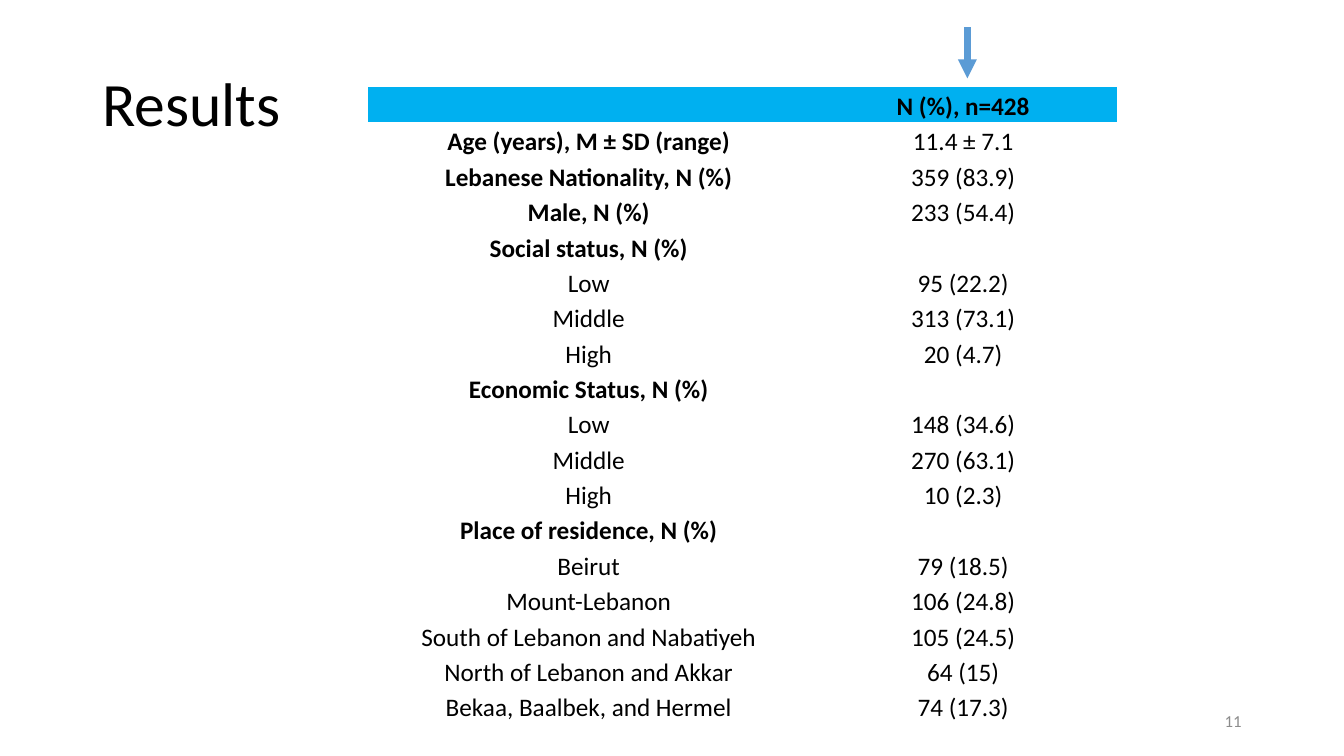
from lxml.etree import SubElement
from pptx import Presentation
from pptx.dml.color import RGBColor
from pptx.enum.shapes import MSO_CONNECTOR
from pptx.enum.text import MSO_ANCHOR, PP_ALIGN
from pptx.oxml.ns import qn
from pptx.util import Pt

COLORS = {"text": "000000", "header": "00B0F0", "arrow": "5B9BD5", "number": "8C8C8C"}
FONT = "Calibri"
LINE_HEIGHT = 25.25
NO_GRID_STYLE = "{2D5ABB26-0587-4C30-8999-92F81FD0307C}"

ROWS = [
    ([], ["N (%), n=428"]),
    (["Age (years), M ± SD (range)"], ["11.4 ± 7.1"]),
    (["Lebanese Nationality, N (%)"], ["359 (83.9)"]),
    (["Male, N (%)"], ["233 (54.4)"]),
    (["Social status, N (%)", "Low", "Middle", "High"],
     ["95 (22.2)", "313 (73.1)", "20 (4.7)"]),
    (["Economic Status, N (%)", "Low", "Middle", "High"],
     ["148 (34.6)", "270 (63.1)", "10 (2.3)"]),
    (["Place of residence, N (%)", "Beirut", "Mount-Lebanon",
      "South of Lebanon and Nabatiyeh", "North of Lebanon and Akkar",
      "Bekaa, Baalbek, and Hermel"],
     ["79 (18.5)", "106 (24.8)", "105 (24.5)", "64 (15)", "74 (17.3)"]),
]


def color(name):
    return RGBColor.from_string(COLORS[name])


def format_paragraph(paragraph, size, color_name, alignment, bold=False):
    paragraph.alignment = alignment
    paragraph.font.name = FONT
    paragraph.font.size = Pt(size)
    paragraph.font.bold = bold
    paragraph.font.color.rgb = color(color_name)


def add_title(slide, text):
    title = slide.shapes.title
    title.left, title.top, title.width, title.height = Pt(66), Pt(24), Pt(828), Pt(104)
    title.text_frame.text = text
    title.text_frame.vertical_anchor = MSO_ANCHOR.MIDDLE
    paragraph = title.text_frame.paragraphs[0]
    format_paragraph(paragraph, 44, "text", PP_ALIGN.LEFT)
    paragraph.line_spacing = 0.9


def fill_cell(cell, lines, first_bold, is_header):
    cell.margin_left = cell.margin_right = Pt(5)
    cell.margin_top = cell.margin_bottom = 0
    cell.vertical_anchor = MSO_ANCHOR.BOTTOM
    if is_header:
        cell.fill.solid()
        cell.fill.fore_color.rgb = color("header")
    else:
        cell.fill.background()
    cell.text_frame.text = "\n".join(lines)
    for index, paragraph in enumerate(cell.text_frame.paragraphs):
        format_paragraph(paragraph, 18, "text", PP_ALIGN.CENTER, first_bold and index == 0)
        paragraph.line_spacing = 1.15


def add_results_table(slide):
    line_counts = [max(len(labels), len(values)) for labels, values in ROWS]
    frame = slide.shapes.add_table(len(ROWS), 2, Pt(263), Pt(62), Pt(535),
                                   Pt(LINE_HEIGHT * sum(line_counts)))
    table = frame.table
    table.first_row = table.horz_banding = False
    table._tbl.tblPr.find(qn("a:tableStyleId")).text = NO_GRID_STYLE
    for column, width in zip(table.columns, (315, 220)):
        column.width = Pt(width)
    for index, (labels, values) in enumerate(ROWS):
        is_header = index == 0
        table.rows[index].height = Pt(LINE_HEIGHT * line_counts[index])
        fill_cell(table.cell(index, 0), labels, True, is_header)
        fill_cell(table.cell(index, 1), values, is_header, is_header)


def add_slide_number(slide, text):
    box = slide.shapes.add_textbox(Pt(678), Pt(500.5), Pt(216), Pt(28.75))
    box.text_frame.word_wrap = True
    box.text_frame.vertical_anchor = MSO_ANCHOR.MIDDLE
    box.text_frame.text = text
    format_paragraph(box.text_frame.paragraphs[0], 12, "number", PP_ALIGN.RIGHT)


def add_down_arrow(slide, x, top, bottom):
    arrow = slide.shapes.add_connector(MSO_CONNECTOR.STRAIGHT, Pt(x), Pt(top), Pt(x), Pt(bottom))
    arrow.line.color.rgb = color("arrow")
    arrow.line.width = Pt(4.5)
    SubElement(arrow.line._get_or_add_ln(), qn("a:tailEnd"), type="triangle")
    SubElement(arrow._element.spPr, qn("a:effectLst"))


def main():
    presentation = Presentation()
    presentation.slide_width, presentation.slide_height = Pt(960), Pt(540)
    slide = presentation.slides.add_slide(presentation.slide_layouts[5])
    add_title(slide, "Results")
    add_results_table(slide)
    add_slide_number(slide, "11")
    add_down_arrow(slide, 691, 19.5, 56)
    presentation.save("out.pptx")


if __name__ == "__main__":
    main()
